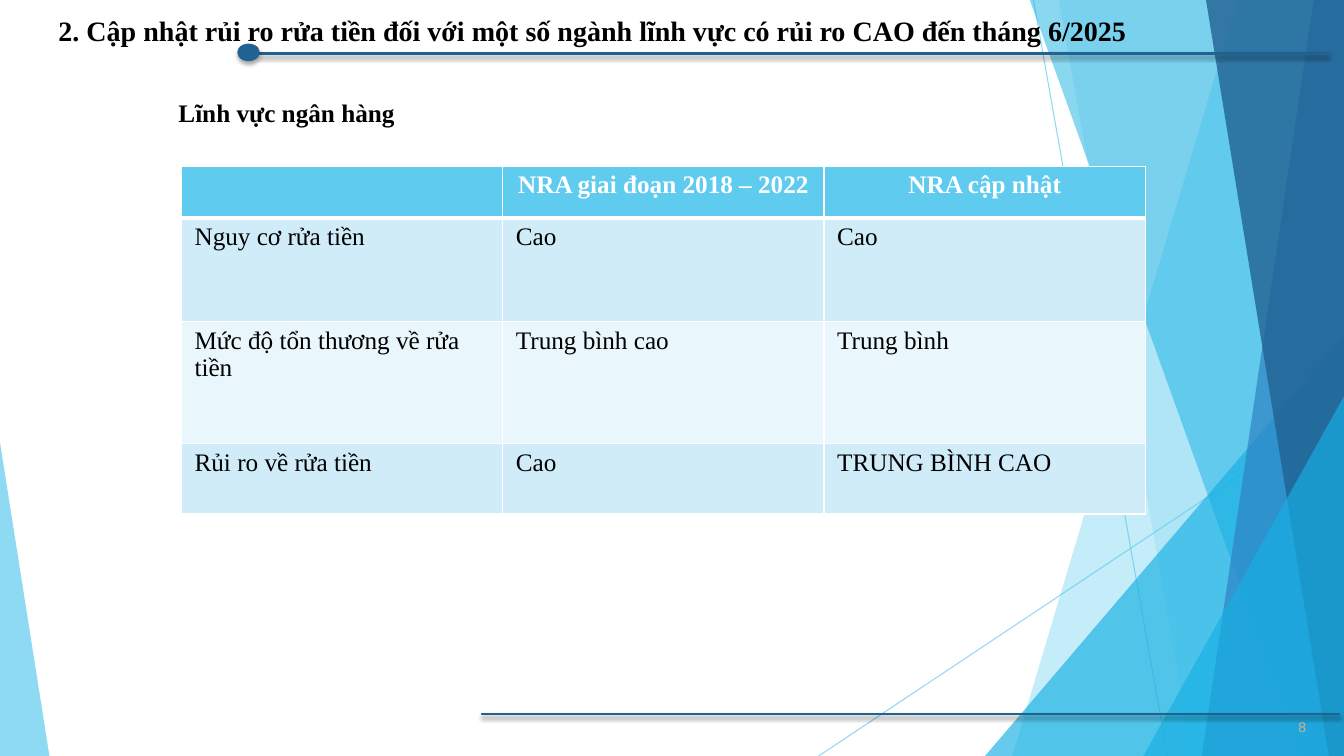
from pptx import Presentation
from pptx.dml.color import RGBColor
from pptx.enum import shapes, text
from pptx.oxml import ns
from pptx.util import Inches, Pt
from lxml import etree

COLORS = {"sky": "5FCBEF", "cyan": "16B0E3", "blue": "2E83C3", "navy": "226292",
          "band": "D1ECF9", "pale": "E9F6FC", "white": "FFFFFF", "black": "000000",
          "tan": "D2B191"}
FONT = "Times New Roman"
ROWS = [
    ["", "NRA giai đoạn 2018 – 2022", "NRA cập nhật"],
    ["Nguy cơ rửa tiền", "Cao", "Cao"],
    ["Mức độ tổn thương về rửa tiền", "Trung bình cao", "Trung bình"],
    ["Rủi ro về rửa tiền", "Cao", "TRUNG BÌNH CAO"],
]
ROW_HEIGHTS = [0.51, 1.03, 1.21, 0.7]


def rgb(name):
    """Return the named colour."""
    return RGBColor.from_string(COLORS[name])


def sub(parent, tag, **attrs):
    """Append a namespaced child element."""
    return etree.SubElement(parent, ns.qn(tag), {k: str(v) for k, v in attrs.items()})


def set_alpha(sp, percent):
    """Make every colour of a shape translucent."""
    for clr in sp.element.spPr.iter(ns.qn("a:srgbClr")):
        sub(clr, "a:alpha", val=percent * 1000)


def paint(sp, color, alpha):
    """Give a shape a translucent fill without line or shadow."""
    sp.shadow.inherit = False
    sp.fill.solid()
    sp.fill.fore_color.rgb = rgb(color)
    sp.line.fill.background()
    set_alpha(sp, alpha)


def style_text(tf, size, color, bold=False, font=FONT, align=text.PP_ALIGN.LEFT):
    """Format all text in a frame."""
    for p in tf.paragraphs:
        p.alignment = align
        for r in p.runs:
            r.font.name, r.font.size, r.font.bold = font, Pt(size), bold
            r.font.color.rgb = rgb(color)


def add_ray(s, x1, y1, x2, y2):
    """Draw a thin translucent line."""
    ray = s.shapes.add_connector(shapes.MSO_CONNECTOR.STRAIGHT, *map(Inches, (x1, y1, x2, y2)))
    ray.line.width = Pt(0.75)
    ray.line.color.rgb = rgb("sky")
    set_alpha(ray, 70)
    sub(ray.element.spPr, "a:effectLst")


def add_panel(s, box, top_in, bottom_in, color, alpha):
    """Draw a slanted panel whose left edge is inset from the right of the box."""
    x, y, w, h = box
    right, bottom = x + w, y + h
    corners = [(right - top_in, y - 0.01), (right, y - 0.01),
               (right, bottom), (right - bottom_in, bottom)]
    points = [(Inches(px), Inches(py)) for px, py in corners]
    builder = s.shapes.build_freeform(*points[0])
    builder.add_line_segments(points[1:])
    paint(builder.convert_to_shape(), color, alpha)


def add_corner(s, x, bottom, w, h, apex, color, alpha):
    """Draw a right triangle standing on the bottom edge."""
    sp = s.shapes.add_shape(shapes.MSO_SHAPE.ISOSCELES_TRIANGLE,
                            *map(Inches, (x, bottom - h, w, h)))
    sp.adjustments[0] = apex
    paint(sp, color, alpha)


def add_backdrop(s, box):
    """Draw the facets at both sides of the slide."""
    x, y, w, h = box
    right, bottom = x + w, y + h
    add_ray(s, right - 3.08, y, right - 1.75, bottom)
    add_ray(s, right, y + 4.03, right - 5.21, bottom)
    add_panel(s, box, 1.05, 3.29, "sky", 36)
    add_panel(s, box, 2.83, 1.5, "sky", 20)
    add_corner(s, right - 3.56, bottom, 3.56, 4.17, 1, "cyan", 66)
    add_panel(s, box, 3.12, 0.42, "cyan", 50)
    add_panel(s, box, 0.3, 1.41, "blue", 70)
    add_panel(s, box, 1.37, 0.15, "navy", 80)
    add_corner(s, right - 1.99, bottom, 1.99, 3.57, 1, "cyan", 66)
    add_corner(s, x, bottom, 0.49, 3.11, 0, "sky", 70)


def add_rule(s, kind, box):
    """Draw a navy rule part with a soft shadow below."""
    sp = s.shapes.add_shape(kind, *map(Inches, box))
    sp.fill.solid()
    sp.fill.fore_color.rgb = sp.line.color.rgb = rgb("navy")
    sp.line.width = Pt(1)
    sp.shadow.inherit = False
    effects = sp.element.spPr.find(ns.qn("a:effectLst"))
    shadow = sub(effects, "a:outerShdw", blurRad=Pt(3), dist=Pt(2), dir=90 * 60000, rotWithShape=0)
    sub(sub(shadow, "a:srgbClr", val=COLORS["black"]), "a:alpha", val=35000)


def fill_placeholder(ph, box, content, size, anchor, align):
    """Place a text placeholder in front and fill it."""
    ph.left, ph.top, ph.width, ph.height = map(Inches, box)
    ph.element.getparent().append(ph.element)
    tf = ph.text_frame
    tf.text = content
    tf.auto_size = text.MSO_AUTO_SIZE.NONE
    tf.vertical_anchor = anchor
    p = tf.paragraphs[0]
    p.space_before = Pt(0)
    pPr = p._p.get_or_add_pPr()
    pPr.set("marL", "0")
    pPr.set("indent", "0")
    sub(pPr, "a:buNone")
    style_text(tf, size, "black", True, align=align)


def add_header(s, box):
    """Place the ruled title and the subheading."""
    x, y, w, h = box
    add_rule(s, shapes.MSO_SHAPE.RECTANGLE, (x + 2.09, y + 0.46, 10.6, 0.02))
    add_rule(s, shapes.MSO_SHAPE.OVAL, (x + 1.88, y + 0.38, 0.21, 0.16))
    fill_placeholder(
        s.shapes.title, box,
        "2. Cập nhật rủi ro rửa tiền đối với một số ngành lĩnh vực có rủi ro CAO đến tháng 6/2025",
        20, text.MSO_ANCHOR.MIDDLE, text.PP_ALIGN.LEFT)
    fill_placeholder(s.placeholders[1], (x + 1.19, y + 0.86, 11.56, 0.58),
                     "Lĩnh vực ngân hàng", 18, text.MSO_ANCHOR.TOP, text.PP_ALIGN.JUSTIFY)


def add_footer(s, box):
    """Place the bottom rule and the slide number."""
    x, y, w, h = box
    add_rule(s, shapes.MSO_SHAPE.RECTANGLE, (x, y, w, 0.01))
    tb = s.shapes.add_textbox(*map(Inches, (x + 8, y, 0.56, h)))
    tb.text_frame.word_wrap = True
    tb.text_frame.text = "8"
    style_text(tb.text_frame, 10, "tan", font="Arial")


def set_borders(cell, top, bottom):
    """Give a cell white borders."""
    tcPr = cell._tc.get_or_add_tcPr()
    for side, width in zip("LRTB", (1, 1, top, bottom)):
        ln = sub(tcPr, f"a:ln{side}", w=Pt(width))
        sub(sub(ln, "a:solidFill"), "a:srgbClr", val=COLORS["white"])


def add_risk_table(s, box):
    """Draw the table that compares the risk ratings."""
    table = s.shapes.add_table(len(ROWS), len(ROWS[0]), *map(Inches, box)).table
    for col in table.columns:
        col.width = Inches(box[2] / len(ROWS[0]))
    for i, row in enumerate(ROWS):
        table.rows[i].height = Inches(ROW_HEIGHTS[i])
        head = i == 0
        for j, content in enumerate(row):
            cell = table.cell(i, j)
            set_borders(cell, 3 if i == 1 else 1, 3 if head else 1)
            cell.fill.solid()
            cell.fill.fore_color.rgb = rgb("sky" if head else "band" if i % 2 else "pale")
            cell.margin_left = cell.margin_right = Inches(0.13)
            cell.text_frame.text = content
            style_text(cell.text_frame, 18, "white" if head else "black", head,
                       align=text.PP_ALIGN.CENTER if head else text.PP_ALIGN.LEFT)


def main():
    """Build and save the slide."""
    prs = Presentation()
    prs.slide_width, prs.slide_height = Inches(13.33), Inches(7.5)
    s = prs.slides.add_slide(prs.slide_layouts[1])
    add_backdrop(s, (0, 0, 13.33, 7.5))
    add_footer(s, (4.78, 7.08, 8.5, 0.27))
    add_header(s, (0.48, 0.06, 11.5, 0.49))
    add_risk_table(s, (1.8, 1.65, 9.56, sum(ROW_HEIGHTS)))
    prs.save("out.pptx")


if __name__ == "__main__":
    main()
